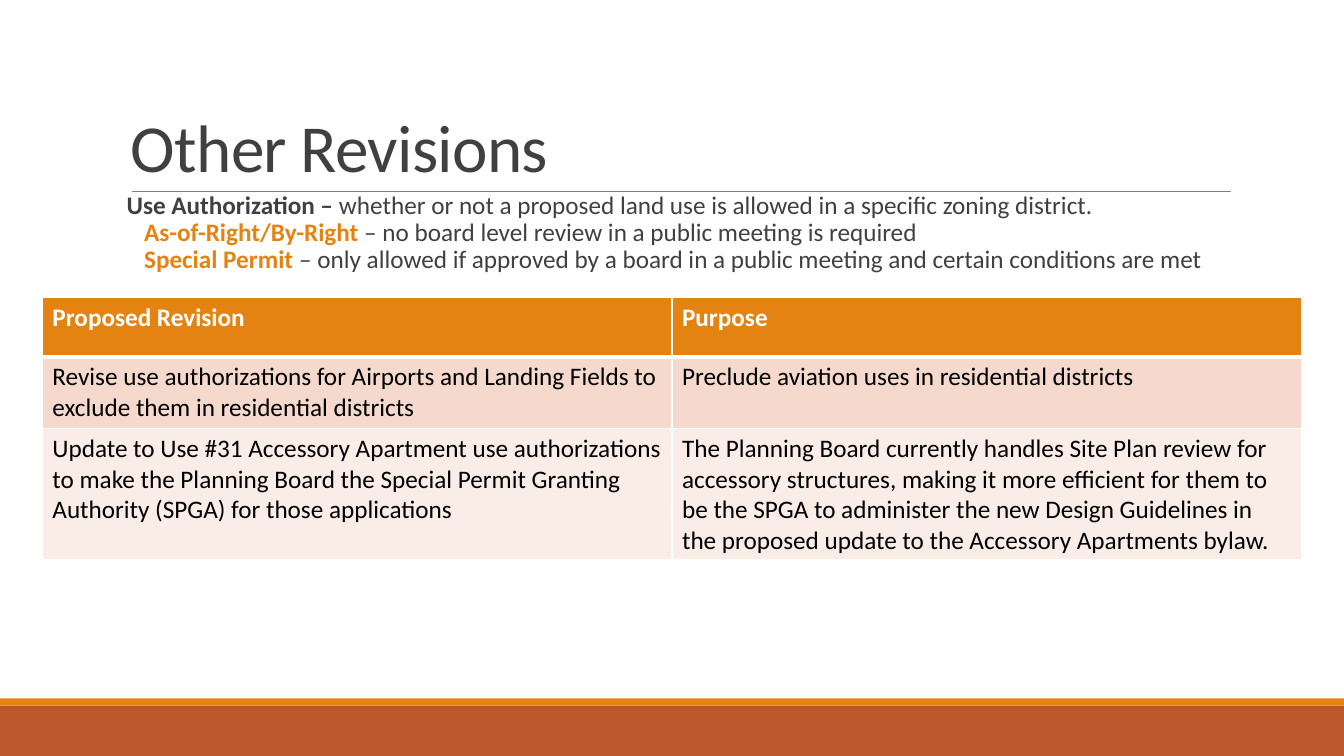
from lxml.etree import SubElement
from pptx import Presentation
from pptx.dml.color import RGBColor
from pptx.enum.shapes import MSO_CONNECTOR as Connector, MSO_SHAPE as Shape
from pptx.enum.text import MSO_ANCHOR as Anchor, PP_ALIGN as Align
from pptx.oxml.ns import qn
from pptx.util import Inches, Pt

TITLE = "Other Revisions"
# Each definition: (term, explanation, left margin, first-line indent, term colour)
DEFINITIONS = [
    ("Use Authorization – ",
     "whether or not a proposed land use is allowed in a specific zoning district.",
     0, -0.1, "text"),
    ("As-of-Right/By-Right ",
     "– no board level review in a public meeting is required",
     0.23, -0.32, "orange"),
    ("Special Permit ",
     "– only allowed if approved by a board in a public meeting and certain conditions are met",
     0.23, -0.32, "orange"),
]
REVISIONS = [
    ("Proposed Revision", "Purpose"),
    ("Revise use authorizations for Airports and Landing Fields to exclude them "
     "in residential districts",
     "Preclude aviation uses in residential districts"),
    ("Update to Use #31 Accessory Apartment use authorizations to make the Planning "
     "Board the Special Permit Granting Authority (SPGA) for those applications",
     "The Planning Board currently handles Site Plan review for accessory structures, "
     "making it more efficient for them to be the SPGA to administer the new Design "
     "Guidelines in the proposed update to the Accessory Apartments bylaw."),
]
ROW_HEIGHTS = [0.59, 0.71, 1.29]
ROW_FILLS = ["orange", "band_dark", "band_light"]
FOOTER_BANDS = [(7, 0.5, "rust"), (6.93, 0.07, "orange")]

THEME = {
    "font": "Calibri", "title_size": 48, "body_size": 18,
    "text": "404040", "orange": "E48312", "rust": "BD582C", "rule": "808080",
    "band_dark": "F5D9CC", "band_light": "FAEDE7", "white": "FFFFFF", "black": "000000",
}
SLIDE_WIDTH, SLIDE_HEIGHT = 13.33, 7.5
TEXT_LEFT, TEXT_WIDTH = 1.2, 11
TABLE_LEFT, TABLE_TOP, TABLE_WIDTH = 0.42, 2.95, 12.49


def color(name):
    return RGBColor.from_string(THEME[name])


def style_run(run, size, color_name, bold=False):
    run.font.name = THEME["font"]
    run.font.size = Pt(THEME[size])
    run.font.color.rgb = color(color_name)
    run.font.bold = bold


def add_text_frame(slide, top, height):
    box = slide.shapes.add_textbox(
        Inches(TEXT_LEFT), Inches(top), Inches(TEXT_WIDTH), Inches(height))
    box.text_frame.word_wrap = True
    return box.text_frame


def add_footer(slide):
    for top, height, fill in FOOTER_BANDS:
        band = slide.shapes.add_shape(
            Shape.RECTANGLE, 0, Inches(top), Inches(SLIDE_WIDTH), Inches(height))
        band.shadow.inherit = False
        band.fill.solid()
        band.fill.fore_color.rgb = color(fill)
        band.line.fill.background()


def add_title(slide):
    rule = slide.shapes.add_connector(
        Connector.STRAIGHT, Inches(1.31), Inches(1.9), Inches(12.21), Inches(1.9))
    rule.line.color.rgb = color("rule")
    rule.line.width = Pt(0.5)
    SubElement(rule._element.spPr, qn("a:effectLst"))

    frame = add_text_frame(slide, 0.31, 1.59)
    frame.vertical_anchor = Anchor.BOTTOM
    paragraph = frame.paragraphs[0]
    paragraph.text = TITLE
    paragraph.line_spacing = 0.85
    run = paragraph.runs[0]
    style_run(run, "title_size", "text")
    run._r.get_or_add_rPr().set("spc", "-50")


def set_blank_bullet(paragraph, margin, indent):
    """Hang the paragraph on a space used as its bullet."""
    properties = paragraph._p.get_or_add_pPr()
    properties.set("marL", str(Inches(margin)))
    properties.set("indent", str(Inches(indent)))
    bullet_color = SubElement(properties, qn("a:buClr"))
    SubElement(bullet_color, qn("a:srgbClr"), val=THEME["orange"])
    SubElement(properties, qn("a:buFont"), typeface=THEME["font"])
    SubElement(properties, qn("a:buChar"), char=" ")


def add_definitions(slide):
    frame = add_text_frame(slide, 1.86, 1.08)
    frame.margin_left = frame.margin_right = 0
    for index, (term, explanation, margin, indent, term_color) in enumerate(DEFINITIONS):
        paragraph = frame.add_paragraph() if index else frame.paragraphs[0]
        paragraph.alignment = Align.JUSTIFY
        paragraph.line_spacing = 0.9
        set_blank_bullet(paragraph, margin, indent)
        for text, color_name, bold in ((term, term_color, True), (explanation, "text", False)):
            run = paragraph.add_run()
            run.text = text
            style_run(run, "body_size", color_name, bold)


def set_borders(cell, top, bottom):
    """Draw white borders; top and bottom are widths in points."""
    properties = cell._tc.get_or_add_tcPr()
    for tag, width in (("lnL", 1), ("lnR", 1), ("lnT", top), ("lnB", bottom)):
        line = SubElement(properties, qn(f"a:{tag}"), w=str(Pt(width)))
        fill = SubElement(line, qn("a:solidFill"))
        SubElement(fill, qn("a:srgbClr"), val=THEME["white"])


def add_revisions(slide):
    columns = len(REVISIONS[0])
    table = slide.shapes.add_table(
        len(REVISIONS), columns, Inches(TABLE_LEFT), Inches(TABLE_TOP),
        Inches(TABLE_WIDTH), Inches(sum(ROW_HEIGHTS))).table
    table.horz_banding = False
    for column in table.columns:
        column.width = Inches(TABLE_WIDTH / columns)
    for row_index, texts in enumerate(REVISIONS):
        header = row_index == 0
        table.rows[row_index].height = Inches(ROW_HEIGHTS[row_index])
        for column_index, text in enumerate(texts):
            cell = table.cell(row_index, column_index)
            set_borders(cell, top=3 if row_index == 1 else 1, bottom=3 if header else 1)
            cell.fill.solid()
            cell.fill.fore_color.rgb = color(ROW_FILLS[row_index])
            cell.text_frame.text = text
            style_run(cell.text_frame.paragraphs[0].runs[0], "body_size",
                      "white" if header else "black", header)


def main():
    presentation = Presentation()
    presentation.slide_width = Inches(SLIDE_WIDTH)
    presentation.slide_height = Inches(SLIDE_HEIGHT)
    slide = presentation.slides.add_slide(presentation.slide_layouts[6])
    add_footer(slide)
    add_title(slide)
    add_definitions(slide)
    add_revisions(slide)
    presentation.save("out.pptx")


if __name__ == "__main__":
    main()
